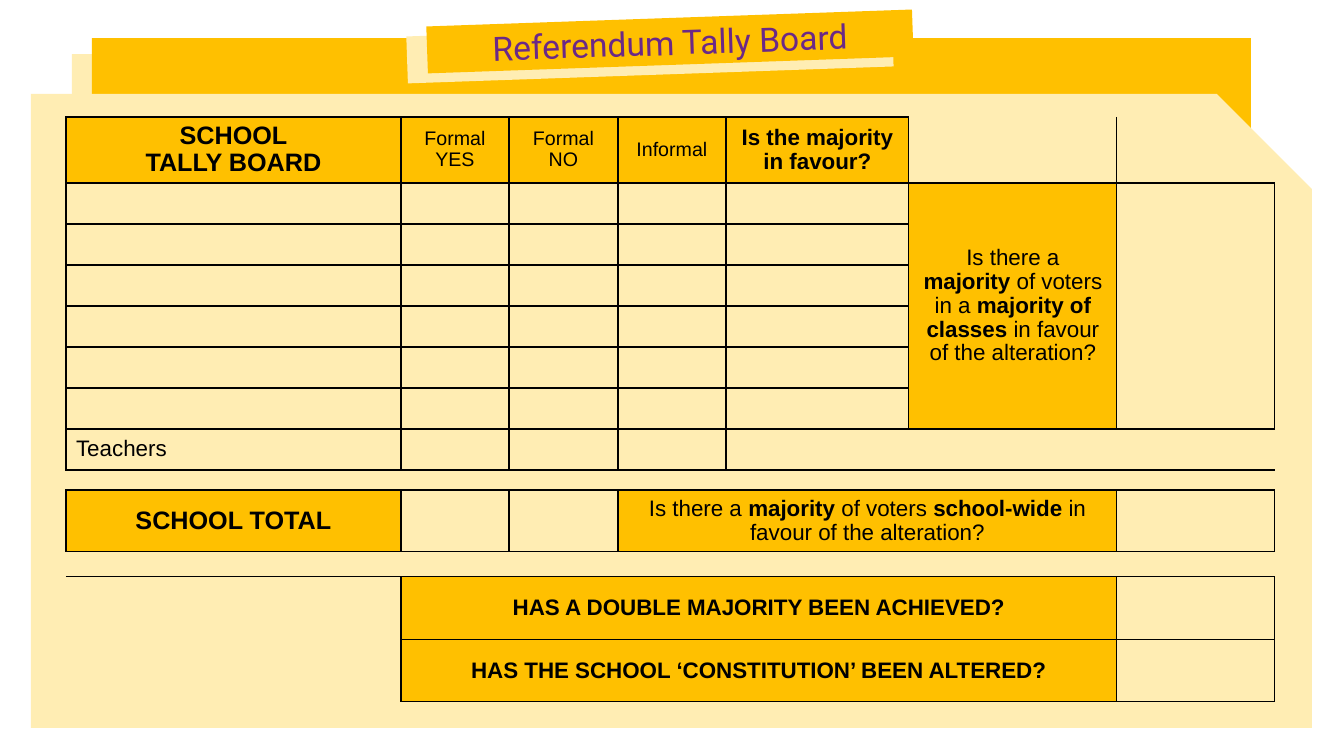
from itertools import product

from lxml.etree import SubElement
from pptx import Presentation
from pptx.dml.color import RGBColor
from pptx.enum.shapes import MSO_SHAPE
from pptx.enum.text import MSO_ANCHOR, PP_ALIGN
from pptx.oxml.ns import qn
from pptx.util import Emu, Pt

THEME = {
    "gold": RGBColor.from_string("FFC000"),
    "cream": RGBColor.from_string("FFEDB3"),
    "purple": RGBColor.from_string("6B2987"),
    "black": RGBColor.from_string("000000"),
    "title": 24, "heading": 18, "body": 16, "small": 14,
    "title_font": "Roboto", "table_font": "Arial",
}
PX = 914400 / 100.8
NO_STYLE = "{2D5ABB26-0587-4C30-8999-92F81FD0307C}"


def px(n):
    return Emu(round(n * PX))


def write(tf, text, size, font, color, align=PP_ALIGN.CENTER, spacing=None):
    """Write one paragraph per line; parts between asterisks are bold."""
    for i, line in enumerate(text.split("\n")):
        p = tf.add_paragraph() if i else tf.paragraphs[0]
        p.alignment = align
        p.line_spacing = spacing
        for j, part in enumerate(line.split("*")):
            if part:
                r = p.add_run()
                r.text = part
                fmt = {"name": font, "size": Pt(size), "bold": j % 2 == 1}
                for key, value in fmt.items():
                    setattr(r.font, key, value)
                r.font.color.rgb = color


prs = Presentation()
prs.slide_width, prs.slide_height = px(1344), px(756)
s = prs.slides.add_slide(prs.slide_layouts[6])

# Folder and title label
panels = [
    (MSO_SHAPE.RECTANGLE, 72, 54, 1159, 131, 0, "cream"),
    (MSO_SHAPE.RECTANGLE, 92, 38, 1159, 131, 0, "gold"),
    (MSO_SHAPE.RECTANGLE, 407, 28, 486, 47, -2, "cream"),
    (MSO_SHAPE.RECTANGLE, 427, 18, 486, 47, -2, "gold"),
    (MSO_SHAPE.SNIP_1_RECTANGLE, 31, 94, 1281, 634, 0, "cream"),
]
for kind, x, y, w, h, angle, fill in panels:
    sp = s.shapes.add_shape(kind, px(x), px(y), px(w), px(h))
    sp.shadow.inherit = False
    sp.fill.solid()
    sp.fill.fore_color.rgb = THEME[fill]
    sp.line.fill.background()
    sp.rotation = angle
    if kind == MSO_SHAPE.SNIP_1_RECTANGLE:
        sp.adjustments[0] = 0.15
    elif angle and fill == "gold":
        sp.text_frame.vertical_anchor = MSO_ANCHOR.MIDDLE
        write(sp.text_frame, "Referendum Tally Board", THEME["title"],
              THEME["title_font"], THEME["purple"])

# Tally table
col_widths = [335, 108, 109, 108, 183, 208, 158]
row_heights = [66] + [41] * 7 + [20, 62, 25, 63, 62]
gap_rows = (8, 10)
n_rows, n_cols = len(row_heights), len(col_widths)
table = s.shapes.add_table(n_rows, n_cols, px(66), px(117),
                           px(sum(col_widths)), px(sum(row_heights))).table
table.first_row = table.horz_banding = False
table._tbl.tblPr.find(qn("a:tableStyleId")).text = NO_STYLE
for col, w in zip(table.columns, col_widths):
    col.width = px(w)
for row, h in zip(table.rows, row_heights):
    row.height = px(h)

# (row, column): (text, size, rows spanned, columns spanned)
labels = {
    (0, 0): ("*SCHOOL*\n*TALLY BOARD*", "heading", 1, 1),
    (0, 1): ("Formal\nYES", "small", 1, 1),
    (0, 2): ("Formal\nNO", "small", 1, 1),
    (0, 3): ("Informal", "small", 1, 1),
    (0, 4): ("*Is the majority in favour?*", "body", 1, 1),
    (1, 5): ("Is there a\n*majority* of voters\nin a *majority of*\n"
             "*classes *in favour\nof the alteration?", "body", 6, 1),
    (9, 0): ("*SCHOOL TOTAL*", "heading", 1, 1),
    (9, 3): ("Is there a *majority* of voters *school-wide* in favour of "
             "the alteration?", "body", 1, 3),
    (11, 1): ("*HAS A DOUBLE MAJORITY BEEN ACHIEVED?*", "body", 1, 5),
    (12, 1): ("*HAS THE SCHOOL ‘CONSTITUTION’ BEEN ALTERED?*", "body", 1, 5),
}
boxes = {pos: spans for pos, (_, _, *spans) in labels.items()}
boxes[1, 6] = [6, 1]
answers = [*product(range(1, 7), range(5)), *product([7], range(3)),
           (9, 1), (9, 2), (9, 6), (11, 6), (12, 6)]
boxes.update((pos, [1, 1]) for pos in answers)

owner = {}
for (r, c), (down, across) in boxes.items():
    for cell_pos in product(range(r, r + down), range(c, c + across)):
        owner[cell_pos] = (r, c)
    if down * across > 1:
        table.cell(r, c).merge(table.cell(r + down - 1, c + across - 1))

# A rule runs wherever two different boxes, or a box and blank space, meet
sides = {"a:lnL": (0, -1), "a:lnR": (0, 1), "a:lnT": (-1, 0), "a:lnB": (1, 0)}
for r, c in product(range(n_rows), range(n_cols)):
    cell = table.cell(r, c)
    cell.vertical_anchor = MSO_ANCHOR.MIDDLE
    if r in gap_rows:
        cell.margin_top = cell.margin_bottom = 0
    tcPr = cell._tc.get_or_add_tcPr()
    for tag, (dr, dc) in sides.items():
        meets = owner.get((r, c)) != owner.get((r + dr, c + dc))
        if meets or cell.is_merge_origin:
            ln = SubElement(tcPr, qn(tag), w=str(Pt(1)))
            fill = SubElement(ln, qn("a:solidFill"))
            SubElement(fill, qn("a:srgbClr"), val=str(THEME["black"]))
    if (r, c) in labels:
        text, size, *_ = labels[r, c]
        cell.fill.solid()
        cell.fill.fore_color.rgb = THEME["gold"]
        write(cell.text_frame, text, THEME[size], THEME["table_font"],
              THEME["black"], spacing=0.96)
    else:
        cell.fill.background()
        if (r, c) == (7, 0):
            write(cell.text_frame, "Teachers", THEME["body"],
                  THEME["table_font"], THEME["black"], PP_ALIGN.LEFT, 0.96)
        else:
            SubElement(cell.text_frame.paragraphs[0]._p,
                       qn("a:endParaRPr"), sz="800")

prs.save("out.pptx")
